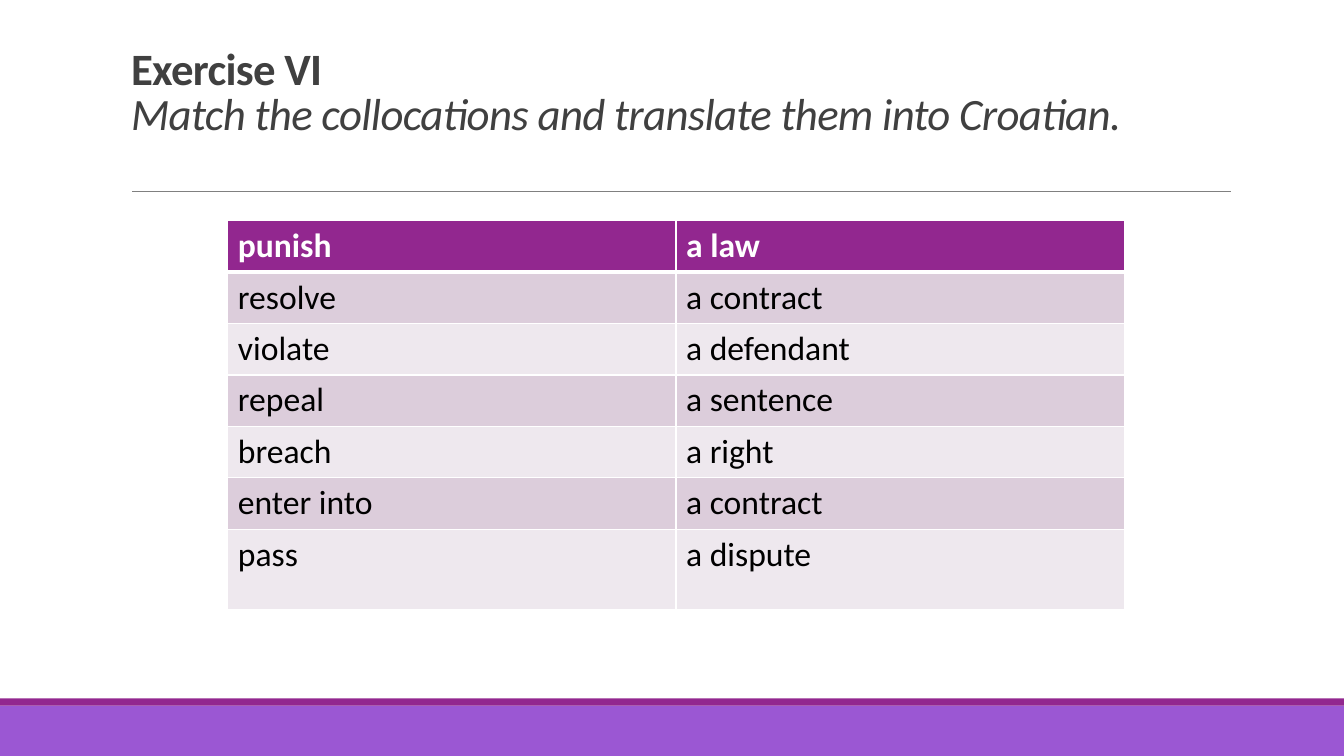
from dataclasses import dataclass

from lxml import etree
from pptx import Presentation
from pptx.dml.color import RGBColor
from pptx.enum.shapes import MSO_CONNECTOR, MSO_SHAPE
from pptx.enum.text import MSO_ANCHOR, MSO_AUTO_SIZE, PP_ALIGN
from pptx.oxml.ns import qn
from pptx.util import Inches, Pt

RECT = MSO_SHAPE.RECTANGLE
STRAIGHT = MSO_CONNECTOR.STRAIGHT
BOTTOM = MSO_ANCHOR.BOTTOM
LEFT = PP_ALIGN.LEFT
NO_FIT = MSO_AUTO_SIZE.NONE

HEADING = "Exercise VI"
TASK = "Match the collocations and translate them into Croatian."
PAIRS = [
    ("punish", "a law"),
    ("resolve", "a contract"),
    ("violate", "a defendant"),
    ("repeal", "a sentence"),
    ("breach", "a right"),
    ("enter into", "a contract"),
    ("pass", "a dispute"),
]


@dataclass(frozen=True)
class Theme:
    font: str = "Calibri"
    title_size: int = 32
    cell_size: int = 24
    title: str = "404040"
    text: str = "000000"
    white: str = "FFFFFF"
    accent: str = "92278F"
    footer: str = "9B57D3"
    rule: str = "808080"
    bands: tuple = ("EEE8EE", "DCCDDB")


THEME = Theme()
WIDTH, HEIGHT = 13.33, 7.5
FOOTER_H, STRIPE_H = 0.5, 0.07
RULE_X, RULE_Y, RULE_W = 1.31, 1.9, 10.9
TITLE_X, TITLE_Y, TITLE_W = 1.2, 0.31, 11
TABLE_X, TABLE_Y, TABLE_W = 2.26, 2.19, 8.89
ROW_H, LAST_ROW_H = 0.51, 0.8


def color(value):
    return RGBColor.from_string(value)


def add_text(p, text, size, fill, bold=False, italic=False, spacing=None):
    r = p.add_run()
    r.text = text
    font = r.font
    font.name, font.size = THEME.font, Pt(size)
    font.bold, font.italic = bold, italic
    font.color.rgb = color(fill)
    if spacing is not None:
        r._r.get_or_add_rPr().set("spc", str(round(spacing * 100)))


def add_band(slide, top, height, fill):
    sp = slide.shapes.add_shape(RECT, 0, Inches(top), Inches(WIDTH), Inches(height))
    sp.shadow.inherit = False
    sp.fill.solid()
    sp.fill.fore_color.rgb = color(fill)
    sp.line.fill.background()


def add_rule(slide):
    y = Inches(RULE_Y)
    line = slide.shapes.add_connector(
        STRAIGHT, Inches(RULE_X), y, Inches(RULE_X + RULE_W), y)
    line.line.color.rgb = color(THEME.rule)
    line.line.width = Pt(0.5)
    etree.SubElement(line._element.spPr, qn("a:effectLst"))


def set_title(slide):
    sp = slide.shapes.title
    sp.left, sp.top = Inches(TITLE_X), Inches(TITLE_Y)
    sp.width, sp.height = Inches(TITLE_W), Inches(RULE_Y - TITLE_Y)
    tf = sp.text_frame
    tf.word_wrap, tf.auto_size = True, NO_FIT
    tf.vertical_anchor = BOTTOM
    tf.margin_bottom = Inches(0.51)
    p = tf.paragraphs[0]
    p.alignment, p.line_spacing = LEFT, 0.85
    style = dict(size=THEME.title_size, fill=THEME.title, spacing=-0.5)
    add_text(p, HEADING, bold=True, **style)
    p.add_line_break()
    add_text(p, TASK, italic=True, **style)


def set_borders(cell, **widths):
    tcPr = cell._tc.get_or_add_tcPr()
    for side in ("L", "R", "T", "B"):
        ln = etree.SubElement(
            tcPr, qn(f"a:ln{side}"), w=str(Pt(widths.get(side, 1))))
        solid = etree.SubElement(ln, qn("a:solidFill"))
        etree.SubElement(solid, qn("a:srgbClr"), val=THEME.white)


def add_pairs(slide):
    heights = [ROW_H] * (len(PAIRS) - 1) + [LAST_ROW_H]
    columns = len(PAIRS[0])
    table = slide.shapes.add_table(
        len(PAIRS), columns, Inches(TABLE_X), Inches(TABLE_Y),
        Inches(TABLE_W), Inches(sum(heights))).table
    for column in table.columns:
        column.width = Inches(TABLE_W / columns)
    for i, (pair, height) in enumerate(zip(PAIRS, heights)):
        table.rows[i].height = Inches(height)
        header = i == 0
        for j, text in enumerate(pair):
            cell = table.cell(i, j)
            set_borders(cell, T=3 if i == 1 else 1, B=3 if header else 1)
            cell.fill.solid()
            cell.fill.fore_color.rgb = color(
                THEME.accent if header else THEME.bands[i % 2])
            add_text(cell.text_frame.paragraphs[0], text, THEME.cell_size,
                     THEME.white if header else THEME.text, bold=header)


def main():
    prs = Presentation()
    prs.slide_width, prs.slide_height = Inches(WIDTH), Inches(HEIGHT)
    slide = prs.slides.add_slide(prs.slide_layouts[5])
    footer_y = HEIGHT - FOOTER_H
    add_band(slide, footer_y, FOOTER_H, THEME.footer)
    add_band(slide, footer_y - STRIPE_H, STRIPE_H, THEME.accent)
    add_rule(slide)
    set_title(slide)
    add_pairs(slide)
    prs.save("out.pptx")


if __name__ == "__main__":
    main()
